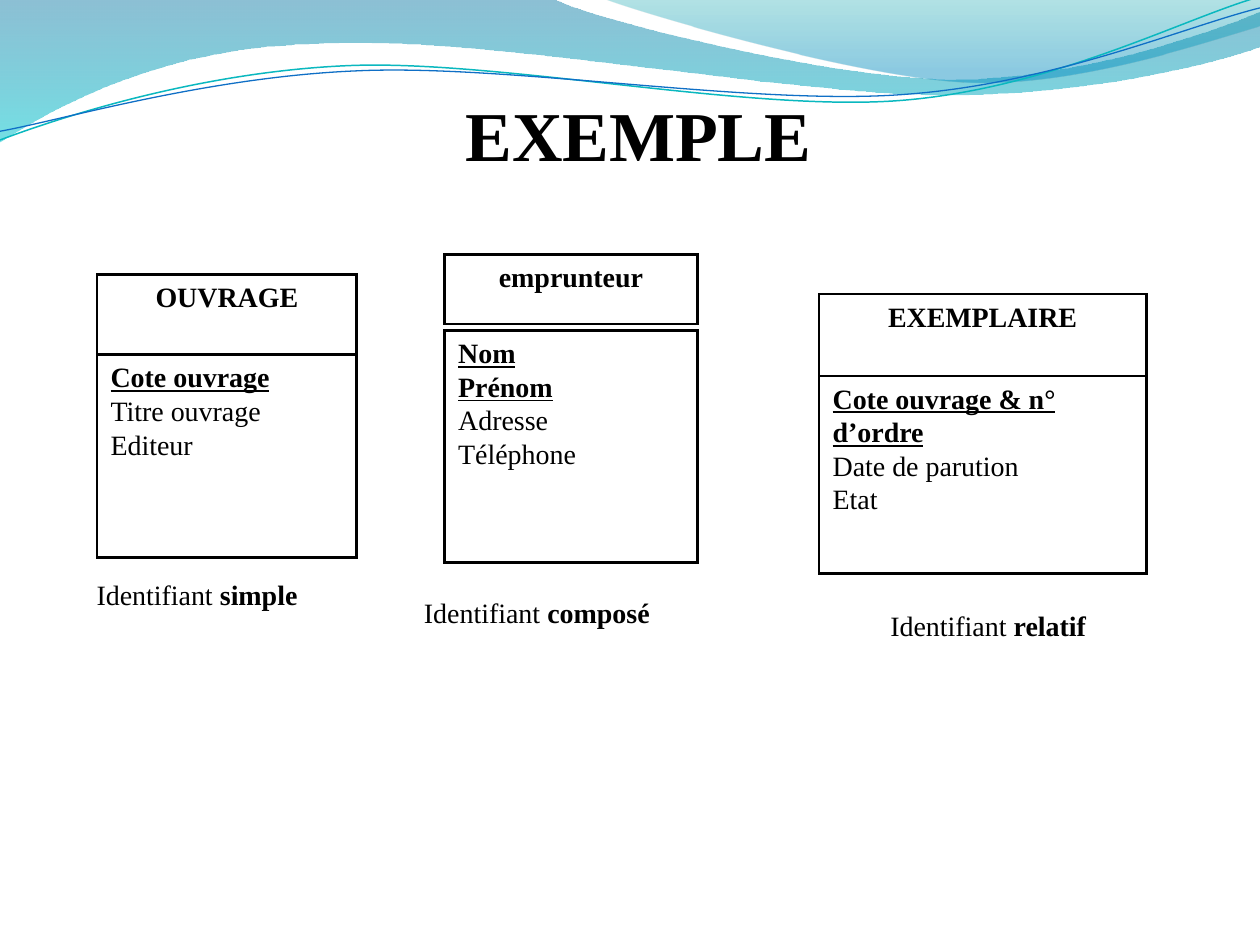
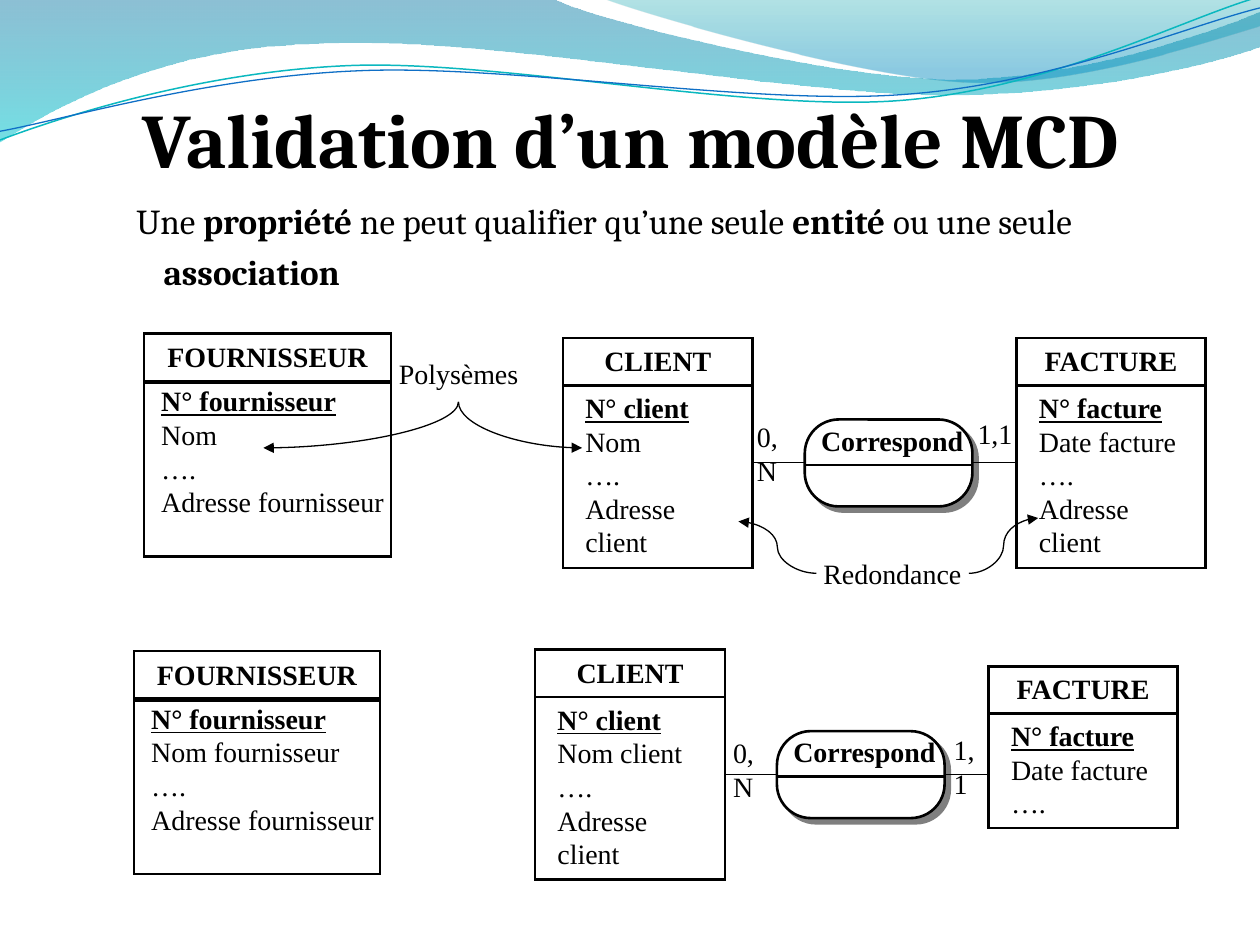
from pptx import Presentation
from pptx.dml.color import RGBColor
from pptx.enum.shapes import MSO_CONNECTOR as CONN, MSO_SHAPE as SHAPE
from pptx.enum.text import MSO_ANCHOR as ANCHOR, PP_ALIGN as ALIGN
from pptx.oxml.ns import qn
from pptx.util import Pt
from lxml.etree import SubElement

BLACK, WHITE = "000000", "FFFFFF"
TIMES, CAMBRIA = "Times New Roman", "Cambria"
CARD_LINE, LINK_LINE = 1.5, 0.75

WIDE_WAVE = [
    (0, 0), [(317, -0.5)],
    [(343, 12), (478, 45), (546, 45)], [(614, 45), (690, 19), (720, 6.5)],
    [(721, 26)],
    [(708, 32), (626, 55), (537, 54)], [(448, 54), (275, 20), (185, 24.5)],
    [(93, 26), (33, 60), (-1, 81.5)],
]
RIGHT_WAVE = [
    (345, -0.5),
    [(366.5, 8), (491, 44.5), (553.5, 47)], [(616, 49.5), (692, 23), (720, 15)],
    [(720, 0)],
]
TEAL_STRAND = [
    (0, 80),
    [(34.5, 67), (114, 41), (199.5, 37.5)], [(284.5, 34), (427, 64), (513.5, 57.5)],
    [(600, 51), (675.5, 11), (718.5, -1.5)],
]
BLUE_STRAND = [
    (0, 75),
    [(34, 69), (118, 44), (204, 40.5)], [(290, 36.5), (430, 60.5), (516, 54)],
    [(602, 48), (677.5, 15), (720, 4.5)],
]


def rgb(value):
    return RGBColor.from_string(value)


def pts(*values):
    return [Pt(v) for v in values]


def add_outline(s, route, close):
    start, *segments = route
    fb = s.shapes.build_freeform(*pts(*start))
    fb.add_line_segments([pts(*p) for seg in segments for p in seg], close=close)
    sp = fb.convert_to_shape()
    sp.shadow.inherit = False
    steps = iter(list(sp._element.spPr.iter(qn("a:lnTo"))))
    for seg in segments:
        first, *others = [next(steps) for _ in seg]
        if others:
            first.tag = qn("a:cubicBezTo")
        for step in others:
            first.append(step[0])
            step.getparent().remove(step)
    return sp


def add_wave(s, route, stops):
    sp = add_outline(s, route, True)
    sp.line.fill.background()
    sp.fill.gradient()
    sp.fill.gradient_angle = 270
    for stop, (position, color, _) in zip(sp.fill.gradient_stops, stops):
        stop.position = position
        stop.color.rgb = rgb(color)
    for clr, (_, _, opacity) in zip(sp._element.spPr.iter(qn("a:srgbClr")), stops):
        SubElement(clr, qn("a:alpha")).set("val", str(opacity * 1000))


def add_strand(s, route, color, width):
    sp = add_outline(s, route, False)
    sp.fill.background()
    sp.line.color.rgb = rgb(color)
    sp.line.width = Pt(width)


def add_waves(s):
    add_wave(s, WIDE_WAVE, [(0, "0074A1", 45), (1, "00C6CF", 55)])
    add_wave(s, RIGHT_WAVE, [(0, "00A1A9", 30), (0.8, "008BBF", 45)])
    add_strand(s, TEAL_STRAND, "0AB8BF", 0.85)
    add_strand(s, BLUE_STRAND, "0F6FC6", 0.75)


def put_text(sp, paragraphs, size=16, font=TIMES, align=ALIGN.LEFT, inset=(6.5, 3),
             anchor=ANCHOR.TOP, wrap=True, indent=(0, 0)):
    tf = sp.text_frame
    tf.word_wrap = wrap
    tf.vertical_anchor = anchor
    tf.margin_left = tf.margin_right = Pt(inset[0])
    tf.margin_top = tf.margin_bottom = Pt(inset[1])
    for i, runs in enumerate(paragraphs):
        p = tf.add_paragraph() if i else tf.paragraphs[0]
        p.alignment = align
        pPr = p._p.get_or_add_pPr()
        for key, value in zip(("marL", "indent"), pts(*indent)):
            pPr.set(key, str(value))
        for text, style in runs:
            r = p.add_run()
            r.text = text
            r.font.name, r.font.size = font, Pt(size)
            r.font.bold, r.font.underline = "b" in style, "u" in style
            r.font.color.rgb = rgb(BLACK)
    return tf


def add_text(s, box, runs, **style):
    return put_text(s.shapes.add_textbox(*pts(*box)), [runs], **style)


def add_box(s, box, shape=SHAPE.RECTANGLE):
    sp = s.shapes.add_shape(shape, *pts(*box))
    sp.shadow.inherit = False
    sp.fill.solid()
    sp.fill.fore_color.rgb = rgb(WHITE)
    sp.line.color.rgb = rgb(BLACK)
    sp.line.width = Pt(CARD_LINE)
    SubElement(sp.line._get_or_add_ln(), qn("a:miter")).set("lim", "800000")
    return sp


def add_entity(s, name, keys, props, x, y, w, head_h, body_h, body_dy=None,
               inset=(6.5, 3), body_inset=None):
    put_text(add_box(s, (x, y, w, head_h)), [[(name, "b")]], align=ALIGN.CENTER, inset=inset)
    body = add_box(s, (x, y + (body_dy or head_h), w, body_h))
    rows = [[(k, "bu")] for k in keys] + [[(v, "")] for v in props]
    put_text(body, rows, inset=body_inset or inset, indent=(6.3, 0))


def add_line(s, start, end, width=LINK_LINE, kind=CONN.STRAIGHT):
    c = s.shapes.add_connector(kind, *pts(*start, *end))
    c.line.color.rgb = rgb(BLACK)
    c.line.width = Pt(width)
    SubElement(c._element.spPr, qn("a:effectLst"))
    return c


def add_curved_arrow(s, tip, tail, preset="curvedConnector3"):
    c = add_line(s, tip, tail, kind=CONN.CURVE)
    c._element.spPr.find(qn("a:prstGeom")).set("prst", preset)
    SubElement(c.line._get_or_add_ln(), qn("a:headEnd")).set("type", "triangle")


def add_remark(s, text, box):
    sp = add_box(s, box, SHAPE.OVAL)
    sp.fill.background()
    sp.line.fill.background()
    put_text(sp, [[(text, "")]], align=ALIGN.CENTER, anchor=ANCHOR.MIDDLE, wrap=False)


def add_association(s, name, x, y):
    sp = add_box(s, (x, y, 95.8, 49.7), SHAPE.ROUNDED_RECTANGLE)
    sp.adjustments[0] = 0.39
    effects = sp._element.spPr.find(qn("a:effectLst"))
    shadow = SubElement(effects, qn("a:outerShdw"), dist=str(Pt(4.2)), dir="2700000",
                        algn="ctr", rotWithShape="0")
    clr = SubElement(shadow, qn("a:srgbClr"), val=BLACK)
    SubElement(clr, qn("a:alpha"), val="50000")
    add_text(s, (x + 2.8, y - 0.8, 94.3, 26), [(name, "b")], wrap=False)
    add_line(s, (x, y + 26), (x + 95.8, y + 26), CARD_LINE)


def add_invoicing(s, x, y, client_name, invoice_dy, invoice_h, invoice_props,
                  card_shift, one_w):
    add_entity(s, "CLIENT", ["N° client"], [client_name, "….", "Adresse client"],
               x, y, 108.5, 27, 104.4)
    add_entity(s, "FACTURE", ["N° facture"], ["Date facture", "….", *invoice_props],
               x + 259.2, y + invoice_dy, 108, 27, invoice_h)
    add_association(s, "Correspond", x + 138.2, y + 46.5)
    for start, end in ((108.5, 138.2), (234, 259.2)):
        add_line(s, (x + start, y + 71.3), (x + end, y + 71.3))
    cx, cy = x + card_shift[0], y + card_shift[1]
    add_text(s, (cx + 230.4, cy + 41.8, one_w, 26), [("1,1", "")])
    add_text(s, (cx + 104.4, cy + 43.6, 36, 26), [("0,N", "")])


def add_supplier(s, x, y, w, name):
    add_entity(s, "FOURNISSEUR", ["N° fournisseur"], [name, "….", "Adresse fournisseur"],
               x, y, w, 27.4, 99.4, 28.2, inset=(3.6, 3.6), body_inset=(3.6, 0.7))


def build_example(s):
    add_waves(s)
    add_text(s, (258.3, 49, 213, 55.4), [("EXEMPLE", "b")], size=40,
             align=ALIGN.CENTER, inset=(7.2, 3.6), wrap=False)
    narrow = (1.5, 3)
    entities = [
        ("emprunteur", ["Nom", "Prénom"], ["Adresse", "Téléphone"],
         (254, 145.3, 144.6, 39.8, 132.5, 43.6), "composé", (240.8, 337.3, 196.6, 40)),
        ("EXEMPLAIRE", ["Cote ouvrage & n° d’ordre"], ["Date de parution", "Etat"],
         (468, 168, 187, 46.8, 113), "relatif", (507.3, 344.5, 130.3, 44.6)),
        ("OUVRAGE", ["Cote ouvrage"], ["Titre ouvrage", "Editeur"],
         (55.4, 156.8, 148.5, 47, 116, 45.9), "simple", (53.7, 327, 154.8, 45.4)),
    ]
    for name, keys, props, layout, kind, caption in entities:
        add_entity(s, name, keys, props, *layout, inset=narrow)
        add_text(s, caption, [("Identifiant ", ""), (kind, "b")], inset=narrow)


def build_validation(s):
    add_waves(s)
    add_text(s, (36.7, 33.5, 648, 90), [("Validation d’un modèle MCD", "b")], size=44,
             font=CAMBRIA, align=ALIGN.CENTER, inset=(0, 0), anchor=ANCHOR.MIDDLE)
    rule = [("Une ", ""), ("propriété", "b"), (" ne peut qualifier qu’une seule ", ""),
            ("entité", "b"), (" ou une seule ", ""), ("association", "b")]
    tf = add_text(s, (36, 105.8, 678, 392), rule, size=20, font=CAMBRIA,
                  inset=(7.2, 3.6), indent=(50.4, -15.6))
    p = tf.paragraphs[0]
    p.line_spacing = 1.2
    p.space_before = p.space_after = Pt(2)

    add_invoicing(s, 321.7, 193.2, "Nom", 0, 104.4, ["Adresse client"], (0, 0), 35)
    add_supplier(s, 82.2, 190.5, 141.3, "Nom")
    add_remark(s, "Redondance", (466.5, 303.8, 87, 47.5))
    add_curved_arrow(s, (422, 298), (466.5, 327.6))
    add_curved_arrow(s, (593.3, 296), (553.7, 327.6))
    add_remark(s, "Polysèmes", (223.2, 197.7, 77.8, 31.7))
    for tip in ((150.5, 256), (332.6, 256)):
        add_curved_arrow(s, tip, (262, 229.7), "curvedConnector2")

    add_invoicing(s, 305.8, 371.3, "Nom client", 9.4, 65.5, [], (2.2, 2.6), 32.4)
    add_supplier(s, 76.5, 371.9, 140.7, "Nom fournisseur")


def main():
    prs = Presentation()
    prs.slide_width, prs.slide_height = pts(720, 540)
    for build in (build_example, build_validation):
        build(prs.slides.add_slide(prs.slide_layouts[6]))
    prs.save("out.pptx")


if __name__ == "__main__":
    main()
